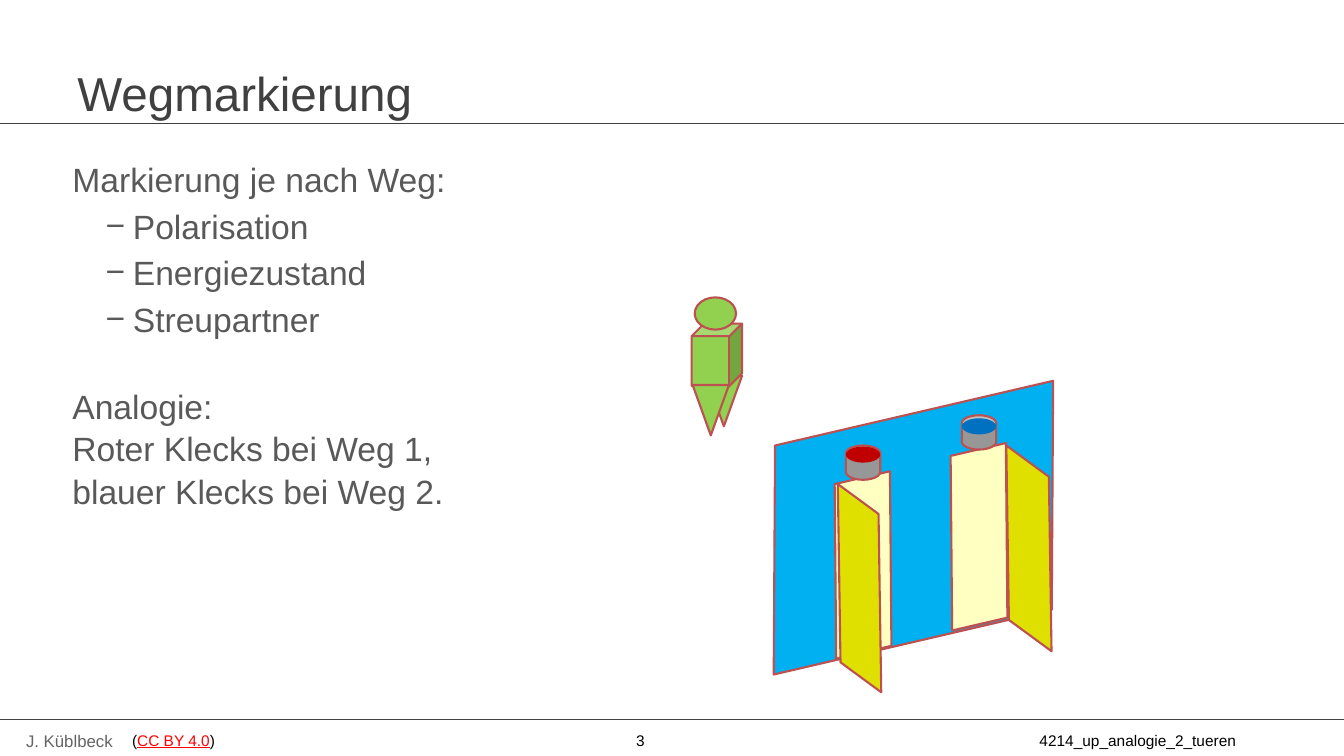
from lxml.etree import SubElement
from pptx import Presentation
from pptx.dml.color import RGBColor
from pptx.enum.shapes import MSO_CONNECTOR, MSO_SHAPE as Preset
from pptx.enum.text import MSO_ANCHOR
from pptx.oxml.ns import qn
from pptx.util import Inches, Pt

FONT = "Arial"
BLACK = RGBColor(0x00, 0x00, 0x00)
TITLE_GREY = RGBColor(0x40, 0x40, 0x40)
BODY_GREY = RGBColor(0x59, 0x59, 0x59)
AUTHOR_GREY = RGBColor(0x64, 0x64, 0x64)
LICENCE_RED = RGBColor(0xFF, 0x00, 0x00)
OUTLINE = RGBColor(0xBD, 0x51, 0x51)
FIGURE_GREEN = RGBColor(0x92, 0xD0, 0x50)
WALL_BLUE = RGBColor(0x00, 0xB0, 0xF0)
OPENING_CREAM = RGBColor(0xFF, 0xFF, 0xC1)
DOOR_YELLOW = RGBColor(0xE0, 0xE0, 0x00)
POT_GREY = RGBColor(0x97, 0x97, 0x97)
PAINT_RED = RGBColor(0xC0, 0x00, 0x00)
PAINT_BLUE = RGBColor(0x00, 0x70, 0xC0)


class SlideBuilder:
    def __init__(self, slide):
        self.slide = slide

    def text_frame(self, left, top, width, height, inset=True, anchor=MSO_ANCHOR.TOP):
        box = self.slide.shapes.add_textbox(
            Inches(left), Inches(top), Inches(width), Inches(height))
        frame = box.text_frame
        frame.word_wrap = True
        frame.vertical_anchor = anchor
        if not inset:
            frame.margin_left = frame.margin_right = 0
            frame.margin_top = frame.margin_bottom = 0
        return frame

    def run(self, paragraph, text, size, color, underline=None):
        run = paragraph.add_run()
        run.text = text
        run.font.name = FONT
        run.font.size = Pt(size)
        run.font.color.rgb = color
        run.font.underline = underline

    def indent(self, paragraph, margin, first_line=0, bullet=None):
        props = paragraph._p.get_or_add_pPr()
        props.set("marL", str(Inches(margin)))
        props.set("indent", str(Inches(first_line)))
        if bullet:
            SubElement(props, qn("a:buFont"), typeface=FONT)
            SubElement(props, qn("a:buChar"), char=bullet)

    def tab_stops(self, paragraph, *positions):
        stops = SubElement(paragraph._p.get_or_add_pPr(), qn("a:tabLst"))
        for position in positions:
            SubElement(stops, qn("a:tab"), pos=str(Inches(position)), algn="l")

    def rule(self, y):
        """Draw a horizontal line over the whole slide width."""
        line = self.slide.shapes.add_connector(
            MSO_CONNECTOR.STRAIGHT, 0, Inches(y), Inches(13.33), Inches(y))
        line.line.color.rgb = TITLE_GREY
        line.line.width = Pt(0.75)
        SubElement(line._element.spPr, qn("a:effectLst"))

    def group(self):
        return self.slide.shapes.add_group_shape()

    def shape(self, group, preset, left, top, width, height, fill,
              outlined=True, rotation=0, adjust=None, flip=None):
        shape = group.shapes.add_shape(
            preset, Inches(left), Inches(top), Inches(width), Inches(height))
        shape.shadow.inherit = False
        shape.fill.solid()
        shape.fill.fore_color.rgb = fill
        if outlined:
            shape.line.color.rgb = OUTLINE
            shape.line.width = Pt(1.5)
        else:
            shape.line.fill.background()
        shape.rotation = rotation
        if adjust is not None:
            shape.adjustments[0] = adjust
        if flip:
            shape._element.spPr.get_or_add_xfrm().set(flip, "1")


def add_footer(builder):
    author = builder.text_frame(0.16, 7.2, 1.55, 0.3).paragraphs[0]
    builder.run(author, "J. Küblbeck", 12, AUTHOR_GREY)
    footer = builder.text_frame(1.31, 7.25, 11.86, 0.19, inset=False).paragraphs[0]
    builder.tab_stops(footer, 5, 9)
    builder.run(footer, "(", 11, BLACK)
    builder.run(footer, "CC BY 4.0", 11, LICENCE_RED, underline=True)
    builder.run(footer, ")\t3\t4214_up_analogie_2_tueren", 11, BLACK)


def add_body(builder):
    body = builder.text_frame(0.5, 1.51, 6, 5.39)
    intro = body.paragraphs[0]
    builder.indent(intro, 0.12)
    builder.run(intro, "Markierung je nach Weg:", 24, BODY_GREY)
    for marking in ("Polarisation", "Energiezustand", "Streupartner"):
        item = body.add_paragraph()
        builder.indent(item, 0.72, -0.27, bullet="−")
        builder.run(item, marking, 24, BODY_GREY)
    analogy = body.add_paragraph()
    builder.indent(analogy, 0.12)
    builder.run(analogy, "Analogie:", 24, BODY_GREY)
    for sentence in ("Roter Klecks bei Weg 1,", "blauer Klecks bei Weg 2."):
        analogy.add_line_break()
        builder.run(analogy, sentence, 24, BODY_GREY)
    for paragraph in body.paragraphs:
        paragraph.line_spacing = 1.05
        paragraph.space_before = Pt(3)
    analogy.space_before = Pt(32)


def add_figure(builder):
    figure = builder.group()
    for preset, left, top, width, height, flip in (
            (Preset.ISOSCELES_TRIANGLE, 7, 3.73, 0.36, 0.5, "flipV"),
            (Preset.CUBE, 6.86, 3.21, 0.5, 0.62, None),
            (Preset.OVAL, 6.89, 2.95, 0.41, 0.32, None),
            (Preset.ISOSCELES_TRIANGLE, 6.87, 3.82, 0.36, 0.5, "flipV")):
        builder.shape(figure, preset, left, top, width, height, FIGURE_GREEN, flip=flip)


def add_doors(builder):
    doors = builder.group()
    wall_angle, door_angle = 346.9, 216.3
    builder.shape(doors, Preset.PARALLELOGRAM, 7.38, 4.13, 3.36, 2.21, WALL_BLUE,
                  rotation=wall_angle, adjust=0.239)
    for left, top in ((8.09, 4.76), (9.24, 4.48)):
        builder.shape(doors, Preset.PARALLELOGRAM, left, top, 0.94, 1.69,
                      OPENING_CREAM, rotation=wall_angle, adjust=0.402)
    for left, top, height in ((7.74, 5.13, 1.41), (9.42, 4.75, 1.38)):
        builder.shape(doors, Preset.PARALLELOGRAM, left, top, 1.57, height,
                      DOOR_YELLOW, rotation=door_angle, adjust=0.758, flip="flipH")
    for left, pot_top, paint_top, paint in (
            (8.39, 4.42, 4.43, PAINT_RED), (9.54, 4.12, 4.15, PAINT_BLUE)):
        builder.shape(doors, Preset.CAN, left, pot_top, 0.34, 0.34, POT_GREY, adjust=0.453)
        builder.shape(doors, Preset.OVAL, left, paint_top, 0.34, 0.16, paint, outlined=False)


def main():
    presentation = Presentation()
    presentation.slide_width = Inches(13.33)
    presentation.slide_height = Inches(7.5)
    builder = SlideBuilder(presentation.slides.add_slide(presentation.slide_layouts[6]))
    add_footer(builder)
    for y in (1.23, 7.14):
        builder.rule(y)
    title = builder.text_frame(0.67, 0.6, 12, 0.63, anchor=MSO_ANCHOR.MIDDLE).paragraphs[0]
    builder.run(title, "Wegmarkierung", 34, TITLE_GREY)
    add_body(builder)
    add_figure(builder)
    add_doors(builder)
    presentation.save("out.pptx")


if __name__ == "__main__":
    main()
